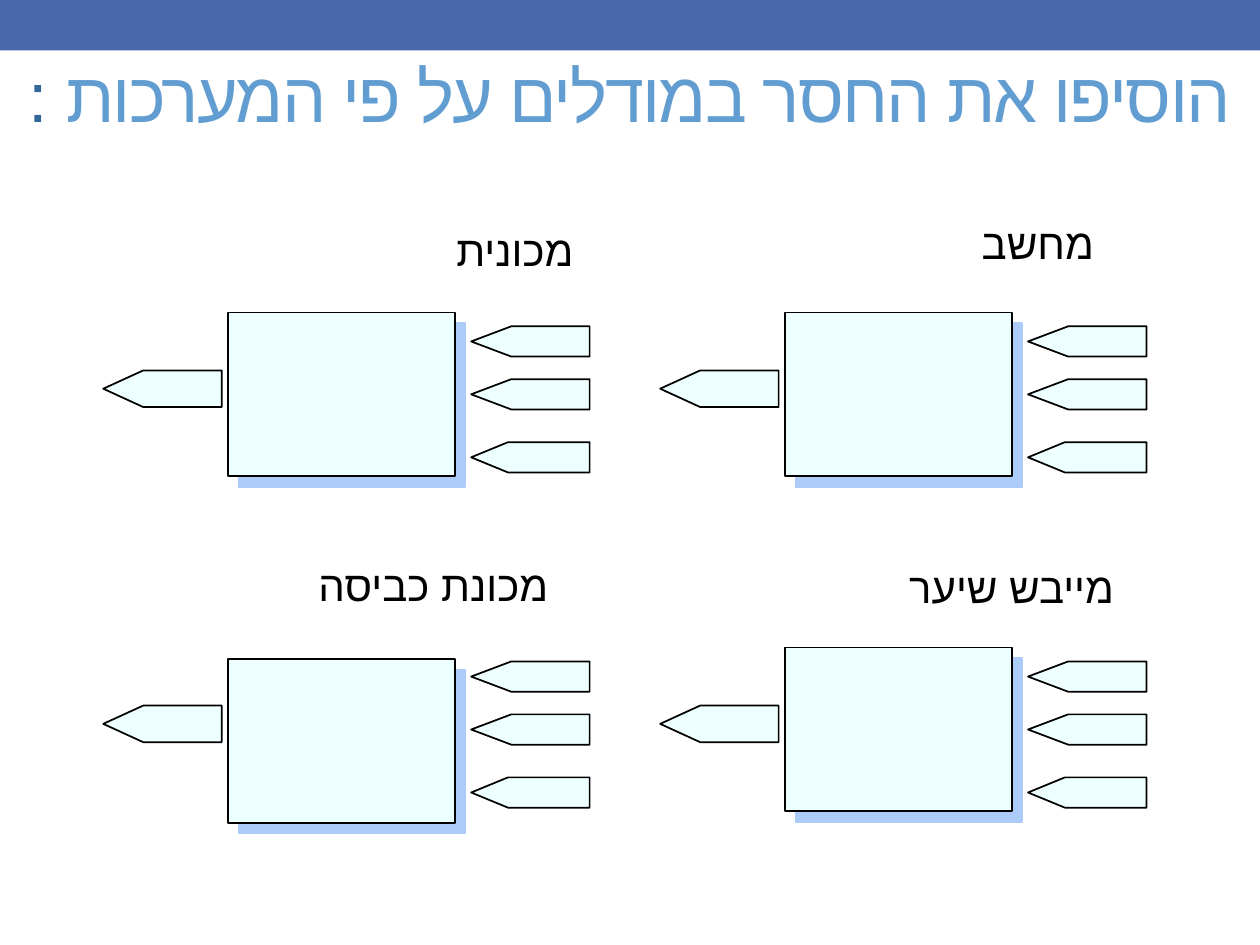
from typing import NamedTuple

from lxml.etree import SubElement
from pptx import Presentation
from pptx.dml.color import RGBColor
from pptx.enum.shapes import MSO_SHAPE
from pptx.enum.text import MSO_ANCHOR, PP_ALIGN
from pptx.oxml.ns import qn
from pptx.util import Inches, Pt

COLORS = {
    "band": "4A66AC",
    "title": "629DD1",
    "colon": "336699",
    "box": "EDFFFE",
    "shadow": "ACCBF9",
    "black": "000000",
}
FONT = "Arial"
ARROW_WIDTH = 0.94


class Arrow(NamedTuple):
    dx: float
    dy: float
    height: float
    point: float


class System(NamedTuple):
    name: str
    left: float
    top: float
    box_dy: float
    label_left: float
    label_top: float


# Offsets from the top-left corner of a model
ARROWS = [
    Arrow(2.92, 0.53, 0.24, 1.324),
    Arrow(2.92, 0.11, 0.24, 1.324),
    Arrow(2.92, 1.03, 0.24, 1.215),
    Arrow(0, 0.46, 0.29, 1.091),
]
LEFT, RIGHT = 0.82, 5.24
UPPER, LOWER = 2.48, 5.14
SYSTEMS = [
    System("מכונית", LEFT, UPPER, 0, 2.52, 1.73),
    System("מחשב", RIGHT, UPPER, 0, 6.65, 1.68),
    System("מכונת כביסה", LEFT, LOWER, 0.09, 2.32, 4.39),
    System("מייבש שיער", RIGHT, LOWER, 0, 6.81, 4.41),
]


def rgb(name: str) -> RGBColor:
    return RGBColor.from_string(COLORS[name])


def add_block(s, kind, left: float, top: float, width: float, height: float,
              fill: str = "box", line: str | None = "black"):
    sp = s.shapes.add_shape(kind, Inches(left), Inches(top), Inches(width), Inches(height))
    sp.shadow.inherit = False
    sp.fill.solid()
    sp.fill.fore_color.rgb = rgb(fill)
    if line:
        sp.line.color.rgb = rgb(line)
        sp.line.width = Pt(1)
    else:
        sp.line.fill.background()
    return sp


def add_hard_shadow(sp) -> None:
    """Cast an unblurred shadow down and to the right."""
    effects = sp.element.spPr.find(qn("a:effectLst"))
    shadow = SubElement(effects, qn("a:outerShdw"), dist=str(Pt(8.5)),
                        dir=str(45 * 60000), algn="ctr", rotWithShape="0")
    SubElement(shadow, qn("a:srgbClr"), val=COLORS["shadow"])


def add_text(s, runs: list[tuple[str, str]], left: float, top: float, width: float,
             height: float, *, size: float, align=PP_ALIGN.RIGHT,
             anchor=MSO_ANCHOR.TOP, spacing: float = 0) -> None:
    """Add a right-to-left line made of (text, colour name) runs."""
    box = s.shapes.add_textbox(Inches(left), Inches(top), Inches(width), Inches(height))
    tf = box.text_frame
    tf.word_wrap = True
    tf.vertical_anchor = anchor
    p = tf.paragraphs[0]
    p.alignment = align
    p._p.get_or_add_pPr().set("rtl", "1")
    for text, color in runs:
        r = p.add_run()
        r.text = text
        r.font.size = Pt(size)
        r.font.name = FONT
        r.font.color.rgb = rgb(color)
        props = r._r.get_or_add_rPr()
        props.set("lang", "he-IL")
        if spacing:
            props.set("spc", str(int(spacing * 100)))
        SubElement(props, qn("a:cs"), typeface=FONT)


def add_model(s, system: System) -> None:
    for arrow in ARROWS:
        sp = add_block(s, MSO_SHAPE.PENTAGON, system.left + arrow.dx,
                       system.top + arrow.dy, ARROW_WIDTH, arrow.height)
        sp.adjustments[0] = arrow.point
        sp.element.spPr.xfrm.set("flipH", "1")
    box = add_block(s, MSO_SHAPE.RECTANGLE, system.left + 0.99,
                    system.top + system.box_dy, 1.8, 1.3)
    add_hard_shadow(box)
    add_text(s, [(system.name, "black")], system.label_left, system.label_top,
             2.13, 0.5, size=24)


def main() -> None:
    prs = Presentation()
    prs.slide_width, prs.slide_height = Inches(10), Inches(7.5)
    s = prs.slides.add_slide(prs.slide_layouts[6])
    add_block(s, MSO_SHAPE.RECTANGLE, 0, 0, 10, 0.4, fill="band", line=None)
    add_text(s, [("הוסיפו את החסר במודלים על פי המערכות ", "title"), (":", "colon")],
             0, 0, 10, 1.5, size=40, align=PP_ALIGN.CENTER,
             anchor=MSO_ANCHOR.MIDDLE, spacing=-1)
    for system in SYSTEMS:
        add_model(s, system)
    prs.save("out.pptx")


if __name__ == "__main__":
    main()
